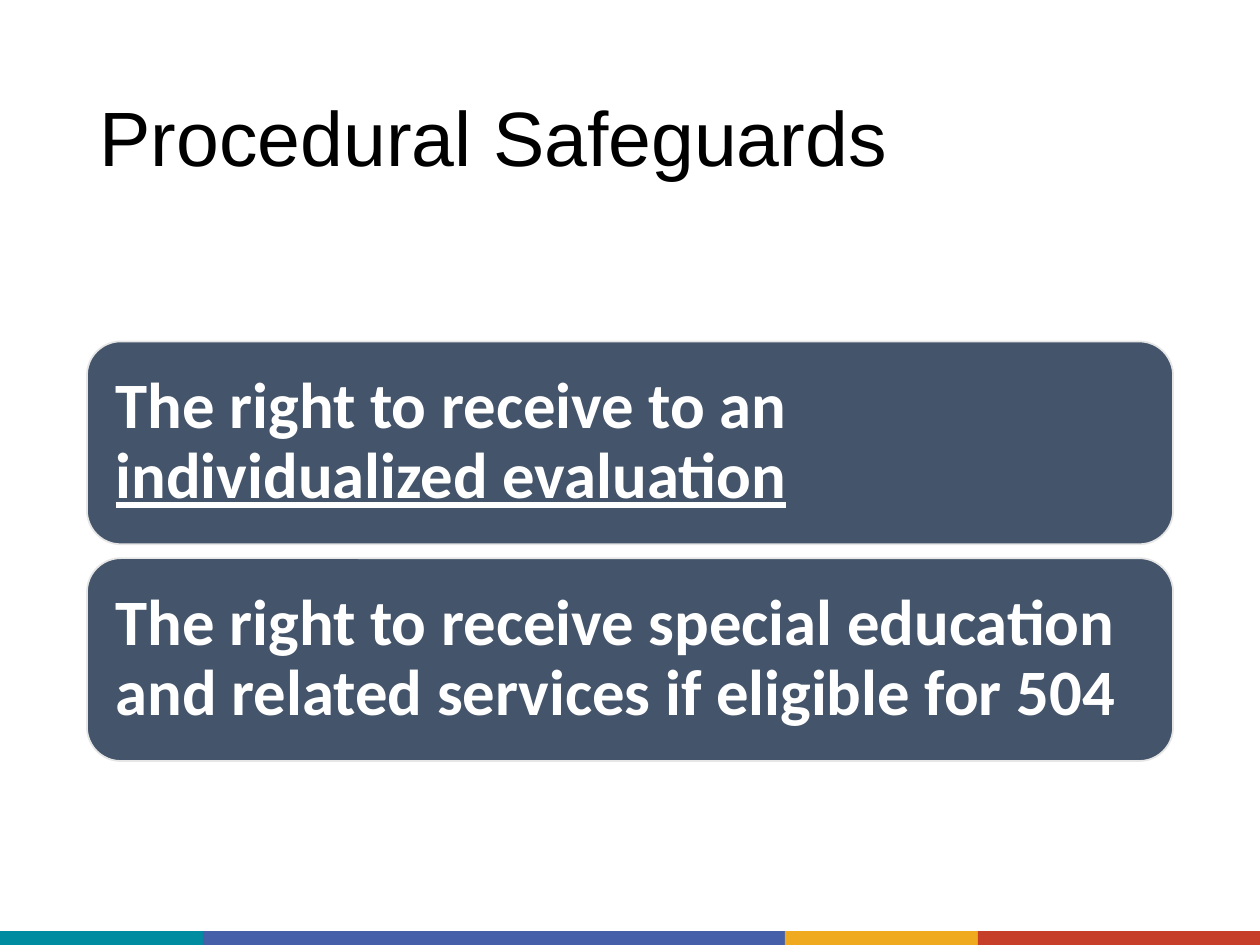
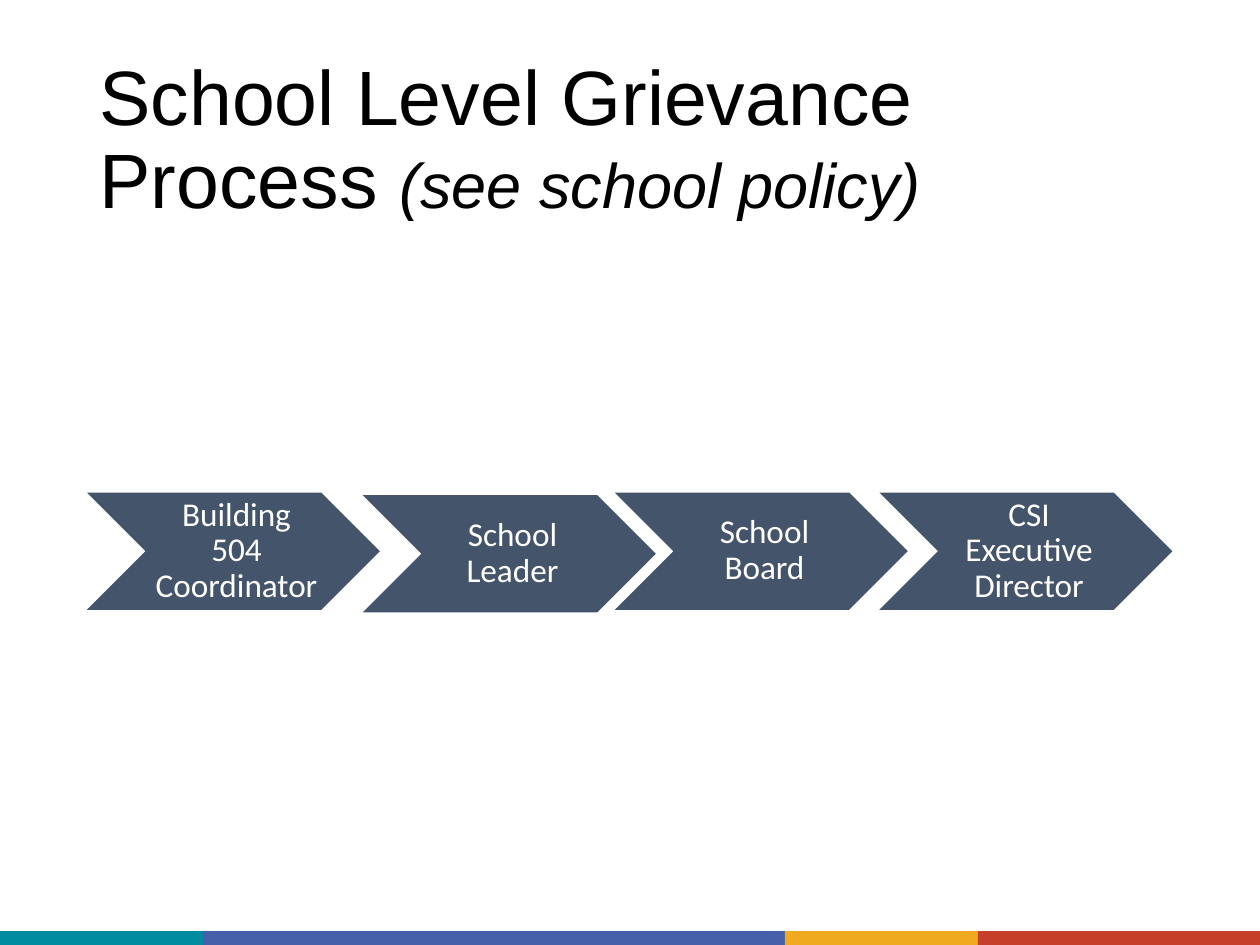
from pptx import Presentation
from pptx.dml.color import RGBColor
from pptx.enum.shapes import MSO_SHAPE as SHAPE
from pptx.enum.text import MSO_ANCHOR as ANCHOR, MSO_AUTO_SIZE as AUTO, PP_ALIGN as ALIGN
from pptx.util import Inches, Pt

WHITE = RGBColor(0xFF, 0xFF, 0xFF)
BLACK = RGBColor(0, 0, 0)
SLATE = RGBColor(0x44, 0x54, 0x6A)
PALE = RGBColor(0xE7, 0xE6, 0xE6)
TEAL = RGBColor(0x00, 0x8C, 0xA0)
BLUE = RGBColor(0x45, 0x5F, 0xA9)
AMBER = RGBColor(0xEF, 0xAA, 0x1F)
RED = RGBColor(0xC6, 0x3F, 0x28)

BANDS = [(TEAL, 1.61), (BLUE, 4.62), (AMBER, 1.53), (RED, 2.24)]
TITLE_BOX = (0.69, 0.4, 8.62, 1.45)
RIGHTS_BOX = (0.69, 2.71, 8.62, 3.33)
PROCESS_BOX = (0.69, 3.91, 8.62, 0.93)

RIGHTS = [
    [("The right to receive to an ", {}),
     ("individualized evaluation", {"underline": True})],
    [("The right to receive special education and related services "
      "if eligible for 504", {})],
]
STEPS = [
    ("Building 504 Coordinator", 0, 0),
    ("School Leader", 2.19, 0.02),
    ("School Board", 4.19, 0),
    ("CSI Executive Director", 6.29, 0),
]


def add_block(slide, kind, box, fill, line=None):
    """Add a flat filled shape at a box given in inches."""
    sp = slide.shapes.add_shape(kind, *map(Inches, box))
    sp.shadow.inherit = False
    sp.fill.solid()
    sp.fill.fore_color.rgb = fill
    if line is None:
        sp.line.fill.background()
    else:
        sp.line.color.rgb = line
        sp.line.width = Pt(1)
    return sp


def write(sp, runs, font, size, color, align=ALIGN.LEFT, insets=None, bold=False):
    """Write one paragraph of (text, font overrides) runs into a shape."""
    tf = sp.text_frame
    tf.word_wrap = True
    tf.auto_size = AUTO.NONE
    tf.vertical_anchor = ANCHOR.MIDDLE
    if insets:
        (tf.margin_left, tf.margin_top,
         tf.margin_right, tf.margin_bottom) = map(Inches, insets)
    p = tf.paragraphs[0]
    p.alignment = align
    p.line_spacing = 0.9
    for text, overrides in runs:
        r = p.add_run()
        r.text = text
        r.font.name = font
        r.font.size = Pt(size)
        r.font.bold = bold
        r.font.color.rgb = color
        for name, value in overrides.items():
            setattr(r.font, name, value)


def add_bands(prs, slide):
    """Draw the bottom colour bands and move them to the slide master."""
    left = 0
    for color, width in BANDS:
        sp = add_block(slide, SHAPE.RECTANGLE, (left, 7.39, width, 0.11), color)
        prs.slide_master.shapes.element.append(sp.element)
        left += width


def add_titled_slide(prs, runs):
    """Add a title-only slide with its title in the shared style."""
    slide = prs.slides.add_slide(prs.slide_layouts[5])
    title = slide.shapes.title
    title.left, title.top, title.width, title.height = map(Inches, TITLE_BOX)
    write(title, runs, "Arial", 44, BLACK)
    return slide


def add_rights(slide, box, rights, gap=0.11):
    """Stack one rounded panel per right inside the box."""
    left, top, width, height = box
    panel = (height - gap * (len(rights) - 1)) / len(rights)
    for i, runs in enumerate(rights):
        sp = add_block(slide, SHAPE.ROUNDED_RECTANGLE,
                       (left, top + i * (panel + gap), width, panel), SLATE, PALE)
        write(sp, runs, "Calibri", 37, WHITE, insets=(0.15,) * 4, bold=True)


def add_process(slide, box, steps):
    """Place the process chevrons at their offsets inside the box."""
    left, top, _, height = box
    for text, dx, dy in steps:
        sp = add_block(slide, SHAPE.CHEVRON,
                       (left + dx, top + dy, 2.5 * height, height), SLATE)
        write(sp, [(text, {})], "Calibri", 19, WHITE, ALIGN.CENTER,
              insets=(0.08, 0.03, 0.03, 0.03))


def main():
    """Build and save the two slides."""
    prs = Presentation()
    prs.slide_width, prs.slide_height = Inches(10), Inches(7.5)

    safeguards = add_titled_slide(prs, [("Procedural Safeguards", {})])
    add_bands(prs, safeguards)
    add_rights(safeguards, RIGHTS_BOX, RIGHTS)

    grievance = add_titled_slide(prs, [
        ("School Level Grievance Process ", {}),
        ("(see school policy)", {"size": Pt(36), "italic": True}),
    ])
    add_process(grievance, PROCESS_BOX, STEPS)

    prs.save("out.pptx")


if __name__ == "__main__":
    main()
